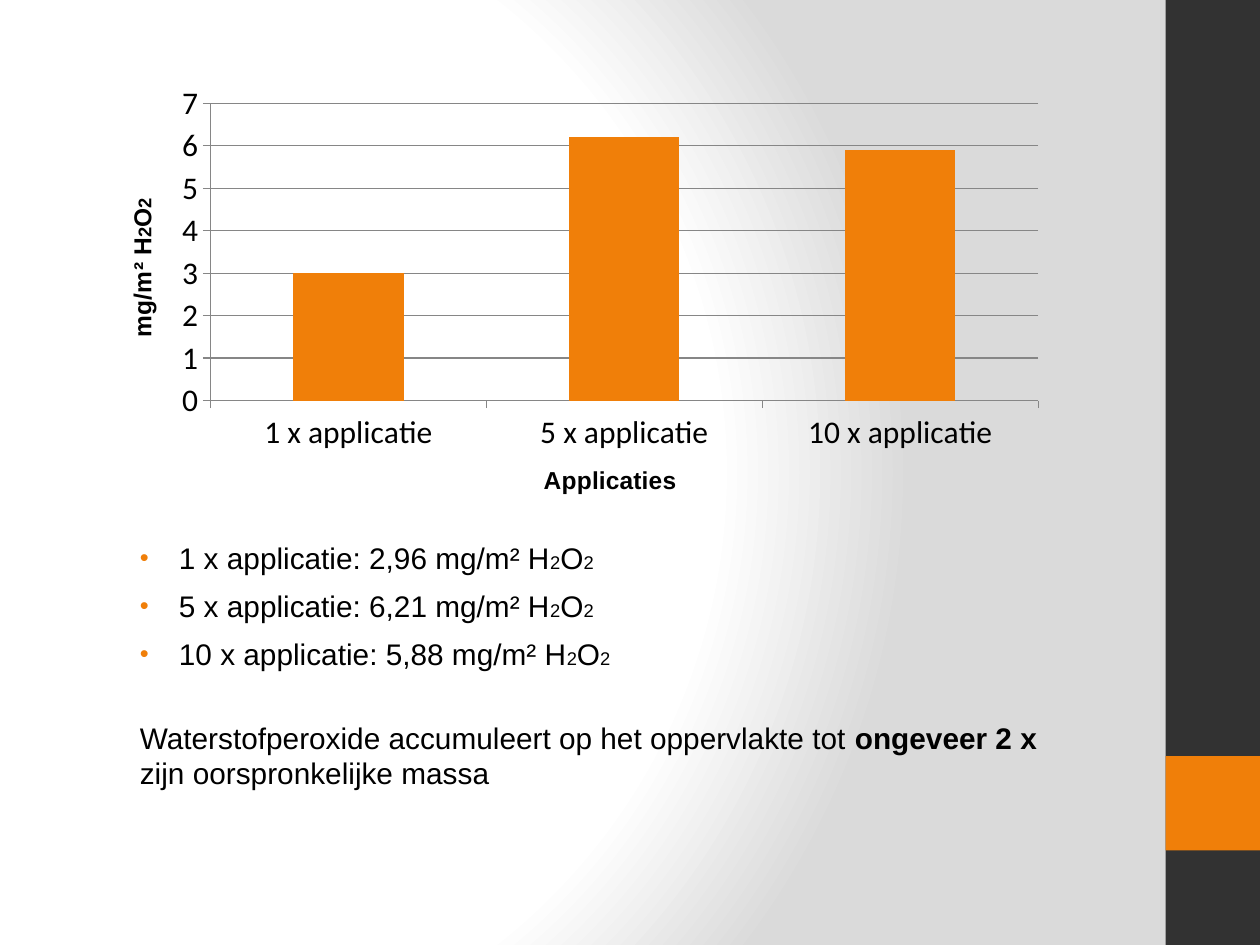
from lxml import etree
from pptx import Presentation
from pptx import util as u
from pptx.chart import data
from pptx.dml import color
from pptx.enum import chart as kinds, shapes, text
from pptx.oxml import parse_xml
from pptx.oxml import ns

COLOURS = {"dark": "323232", "orange": "F07F09", "black": "000000",
           "grid": "868686", "white": "FFFFFF", "grey": "DADADA"}
PEROXIDE = [("H", False), ("2", True), ("O", False), ("2", True)]


def rgb(name):
    return color.RGBColor.from_string(COLOURS[name])


def apply(target, **values):
    for name, value in values.items():
        setattr(target, name, value)


class SlideBuilder:
    body = {"name": "Arial", "size": u.Pt(17), "bold": False}
    axis_title = {"name": "Arial", "size": u.Pt(14), "bold": True}
    axis_text = {"name": "Calibri", "size": u.Pt(18), "bold": False}

    def __init__(self, page):
        self.page = page

    def background(self, stops, centre):
        self.page.background.fill.solid()
        properties = self.page.element.xpath("p:cSld/p:bg/p:bgPr")[0]
        stop_list = "".join(
            f'<a:gs pos="{position * 1000}"><a:srgbClr val="{COLOURS[name]}"/></a:gs>'
            for position, name in stops)
        edges = " ".join(f'{side}="{value * 1000}"' for side, value in zip("ltrb", centre))
        gradient = parse_xml(
            f'<a:gradFill {ns.nsdecls("a")} rotWithShape="1"><a:gsLst>{stop_list}</a:gsLst>'
            f'<a:path path="circle"><a:fillToRect {edges}/></a:path></a:gradFill>')
        properties.replace(properties[0], gradient)

    def block(self, left, top, width, height, fill):
        shape = self.page.shapes.add_shape(
            shapes.MSO_SHAPE.RECTANGLE, *map(u.Inches, (left, top, width, height)))
        shape.shadow.inherit = False
        shape.fill.solid()
        shape.fill.fore_color.rgb = rgb(fill)
        shape.line.fill.background()

    def span(self, para, words, style, **changes):
        span = para.add_run()
        span.text = words
        apply(span.font, **{**style, **changes})
        span.font.color.rgb = rgb("black")

    def formula(self, para, lead, style, small):
        self.span(para, lead + PEROXIDE[0][0], style)
        for words, is_index in PEROXIDE[1:]:
            self.span(para, words, style, size=u.Pt(small) if is_index else style["size"])

    def body_box(self, left, top, width, height):
        box = self.page.placeholders[1]
        apply(box, left=u.Inches(left), top=u.Inches(top),
              width=u.Inches(width), height=u.Inches(height))
        apply(box.text_frame, word_wrap=True, auto_size=text.MSO_AUTO_SIZE.NONE,
              vertical_anchor=text.MSO_ANCHOR.MIDDLE, margin_left=0, margin_right=0,
              margin_top=u.Inches(0.05), margin_bottom=u.Inches(0.45))
        return box.text_frame

    def paragraph(self, frame, before, bullet=False):
        first = frame.paragraphs[0]
        para = frame.add_paragraph() if first.runs else first
        apply(para, space_before=u.Pt(before), space_after=u.Pt(0), line_spacing=1.0)
        properties = para._p.get_or_add_pPr()
        indent, hanging = (0.39, -0.31) if bullet else (0.08, 0)
        properties.set("marL", str(u.Inches(indent)))
        properties.set("indent", str(u.Inches(hanging)))
        if bullet:
            bullet_colour = etree.SubElement(properties, ns.qn("a:buClr"))
            etree.SubElement(bullet_colour, ns.qn("a:srgbClr"), val=COLOURS["orange"])
            etree.SubElement(properties, ns.qn("a:buSzPct"), val="85000")
            etree.SubElement(properties, ns.qn("a:buFont"), typeface="Arial")
            etree.SubElement(properties, ns.qn("a:buChar"), char="•")
        else:
            etree.SubElement(properties, ns.qn("a:buNone"))
        return para

    def column_chart(self, left, top, width, height, categories, values):
        chart_data = data.CategoryChartData()
        chart_data.categories = categories
        chart_data.add_series("Series 1", values)
        chart = self.page.shapes.add_chart(
            kinds.XL_CHART_TYPE.COLUMN_CLUSTERED,
            *map(u.Inches, (left, top, width, height)), chart_data).chart
        apply(chart, has_legend=False, has_title=False)
        apply(chart.font, **self.axis_text)
        chart.font.color.rgb = rgb("black")
        plot = chart.plots[0]
        apply(plot, gap_width=150, vary_by_categories=False)
        series_fill = plot.series[0].format.fill
        series_fill.solid()
        series_fill.fore_color.rgb = rgb("orange")
        for axis in (chart.category_axis, chart.value_axis):
            apply(axis, major_tick_mark=kinds.XL_TICK_MARK.OUTSIDE,
                  minor_tick_mark=kinds.XL_TICK_MARK.NONE, has_title=True)
            axis.format.line.color.rgb = rgb("grid")
        apply(chart.value_axis, minimum_scale=0, maximum_scale=7, major_unit=1,
              has_major_gridlines=True)
        chart.value_axis.major_gridlines.format.line.color.rgb = rgb("grid")
        self.place_plot(chart, x=0.87 / width, y=0.22 / height,
                        w=6.57 / width, h=2.36 / height)
        return chart

    def place_plot(self, chart, **fractions):
        area = chart._chartSpace.chart.plotArea
        for old in area.findall(ns.qn("c:layout")):
            area.remove(old)
        layout = etree.Element(ns.qn("c:layout"))
        manual = etree.SubElement(layout, ns.qn("c:manualLayout"))
        settings = {"layoutTarget": "inner", "xMode": "edge", "yMode": "edge", **fractions}
        for name, value in settings.items():
            etree.SubElement(manual, ns.qn(f"c:{name}"), val=str(value))
        area.insert(0, layout)


def main():
    deck = Presentation()
    apply(deck, slide_width=u.Inches(10), slide_height=u.Inches(7.5))
    page = deck.slides.add_slide(deck.slide_layouts[1])
    title = page.shapes.title.element
    title.getparent().remove(title)

    builder = SlideBuilder(page)
    builder.background([(0, "white"), (75, "white"), (100, "grey")], (20, 50, 100, 50))
    builder.block(9.25, 0, 0.75, 7.5, "dark")
    builder.block(9.25, 6, 0.75, 0.75, "orange")

    results = {"1 x applicatie": 2.96, "5 x applicatie": 6.21, "10 x applicatie": 5.88}
    frame = builder.body_box(1.03, 4.38, 8.68, 2.2)
    for label, amount in results.items():
        para = builder.paragraph(frame, 7, bullet=True)
        number = f"{amount:.2f}".replace(".", ",")
        builder.formula(para, f"{label}: {number} mg/m² ", builder.body, 10.5)
    para = builder.paragraph(frame, 27.5)
    builder.span(para, "Waterstofperoxide accumuleert op het oppervlakte tot ", builder.body)
    builder.span(para, "ongeveer 2 x ", builder.body, bold=True)
    para.add_line_break()
    builder.span(para, "zijn oorspronkelijke massa", builder.body)

    heights = [round(amount, 1) for amount in results.values()]
    chart = builder.column_chart(0.8, 0.6, 7.59, 3.55, list(results), heights)
    category_title = chart.category_axis.axis_title.text_frame.paragraphs[0]
    builder.span(category_title, "Applicaties", builder.axis_title)
    value_title = chart.value_axis.axis_title.text_frame.paragraphs[0]
    builder.formula(value_title, "mg/m² ", builder.axis_title, 10.5)

    deck.save("out.pptx")


if __name__ == "__main__":
    main()
